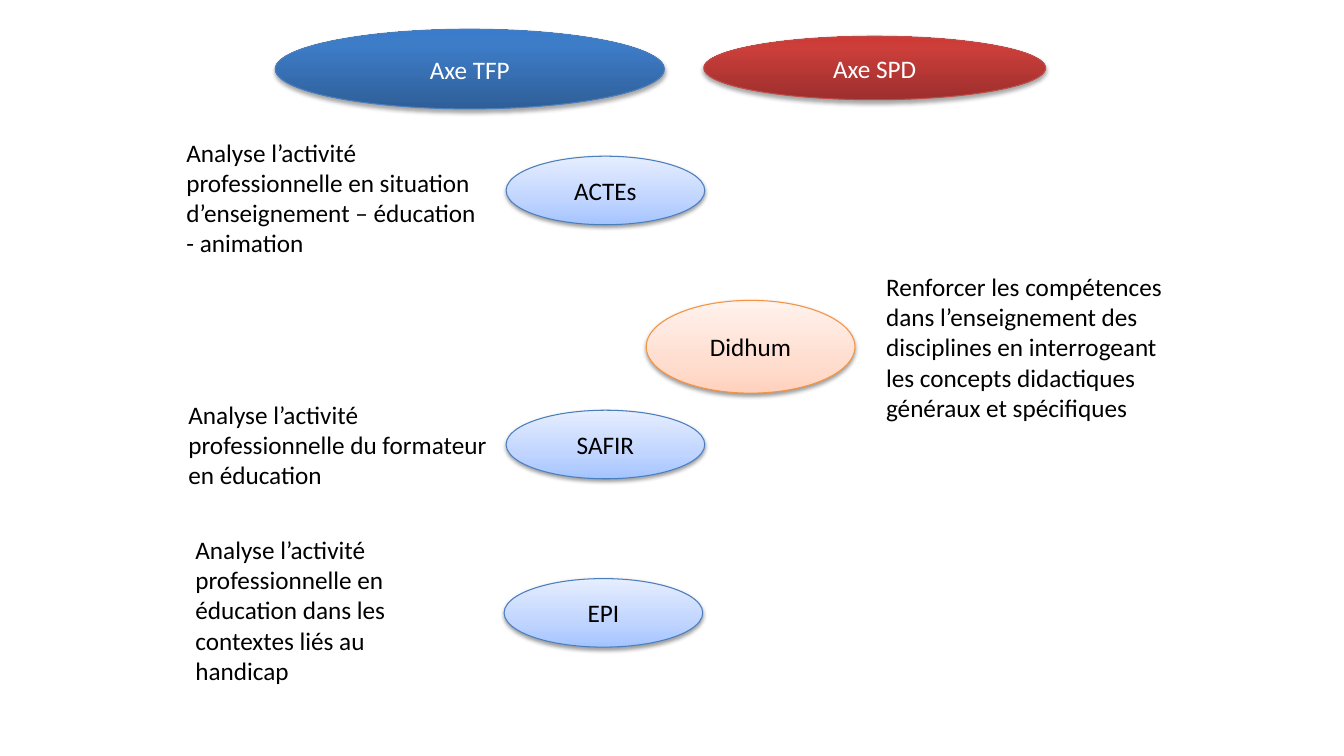
from copy import deepcopy

from lxml import etree
from pptx import Presentation
from pptx.dml.color import RGBColor
from pptx.enum.shapes import MSO_SHAPE
from pptx.enum.text import MSO_ANCHOR, MSO_AUTO_SIZE, PP_ALIGN
from pptx.oxml.ns import qn
from pptx.util import Inches, Pt

ELLIPSE = MSO_SHAPE.OVAL
MIDDLE = MSO_ANCHOR.MIDDLE
CENTER = PP_ALIGN.CENTER
GROW = MSO_AUTO_SIZE.SHAPE_TO_FIT_TEXT

# Gradient stops run from the bottom of the ellipse to the top
AXIS_STOPS, COURSE_STOPS = (0, 0.8, 1), (0, 0.35, 1)
AXIS_SHADOW = {"alpha": 35, "distance": 1.8}
COURSE_SHADOW = {"alpha": 38, "distance": 1.6}
STYLES = {
    "tfp axis": {"stops": AXIS_STOPS, "colors": ("2F5F99", "3D7CC7", "3A7CCB"),
                 "line": "4B7EBC", "text": "FFFFFF", "shadow": AXIS_SHADOW},
    "spd axis": {"stops": AXIS_STOPS, "colors": ("9C2F2D", "CB3E3A", "CE3B37"),
                 "line": "BF4C48", "text": "FFFFFF", "shadow": AXIS_SHADOW},
    "tfp course": {"stops": COURSE_STOPS, "colors": ("A4C4FF", "BFD4FF", "E6EEFF"),
                   "line": "4B7EBC", "text": "000000", "shadow": COURSE_SHADOW},
    "spd course": {"stops": COURSE_STOPS, "colors": ("FFD2BD", "FFDED0", "FFF2ED"),
                   "line": "F69240", "text": "000000", "shadow": COURSE_SHADOW},
}

ELLIPSES = [
    ("Axe SPD", "spd axis", (6.98, 0.36, 3.39, 0.63)),
    ("Axe TFP", "tfp axis", (2.73, 0.29, 3.86, 0.79)),
    ("ACTEs", "tfp course", (5.02, 1.55, 1.97, 0.68)),
    ("SAFIR", "tfp course", (5.02, 4.07, 1.97, 0.68)),
    ("EPI", "tfp course", (5, 5.74, 1.97, 0.68)),
    ("Didhum", "spd course", (6.41, 2.98, 2.07, 0.92)),
]

DESCRIPTIONS = [
    ("Analyse l’activité professionnelle en situation d’enseignement – éducation - animation",
     (1.75, 1.31, 3.19, 1.31)),
    ("Analyse l’activité professionnelle du formateur en éducation",
     (1.77, 3.91, 3.19, 1.01)),
    ("Analyse l’activité professionnelle en éducation dans les contextes liés au handicap",
     (1.84, 5.25, 2.83, 1.62)),
    ("Renforcer les compétences dans l’enseignement des disciplines en interrogeant "
     "les concepts didactiques généraux et spécifiques",
     (8.69, 2.64, 2.99, 1.62)),
]


def color(value):
    return RGBColor.from_string(value)


def write_text(frame, text, text_color):
    frame.word_wrap = True
    para = frame.paragraphs[0]
    span = para.add_run()
    span.text = text
    for name, value in {"name": "Calibri", "size": Pt(18)}.items():
        setattr(span.font, name, value)
    span.font.color.rgb = color(text_color)
    return para


def fill_gradient(shape, positions, colors):
    shape.fill.gradient()
    shape.fill.gradient_angle = 90
    # A new gradient has two stops; add the middle one
    stop_list = shape.fill._xPr.find(qn("a:gradFill")).find(qn("a:gsLst"))
    stop_list.insert(1, deepcopy(stop_list[0]))
    for stop, position, value in zip(shape.fill.gradient_stops, positions, colors):
        stop.position = position
        stop.color.rgb = color(value)


def add_shadow(shape, alpha, distance):
    shape.shadow.inherit = False
    effects = shape._element.spPr.find(qn("a:effectLst"))
    outer = etree.SubElement(effects, qn("a:outerShdw"), {
        "blurRad": str(Pt(3.1)), "dist": str(Pt(distance)),
        "dir": "5400000", "rotWithShape": "0"})
    tint = etree.SubElement(outer, qn("a:srgbClr"), val="000000")
    etree.SubElement(tint, qn("a:alpha"), val=str(alpha * 1000))


def add_ellipse(page, text, style, place):
    shape = page.shapes.add_shape(ELLIPSE, *map(Inches, place))
    fill_gradient(shape, style["stops"], style["colors"])
    shape.line.color.rgb = color(style["line"])
    shape.line.width = Pt(0.75)
    add_shadow(shape, **style["shadow"])
    shape.text_frame.vertical_anchor = MIDDLE
    write_text(shape.text_frame, text, style["text"]).alignment = CENTER


def add_description(page, text, place):
    box = page.shapes.add_textbox(*map(Inches, place))
    write_text(box.text_frame, text, "000000")
    box.text_frame.auto_size = GROW


def main():
    deck = Presentation()
    deck.slide_width, deck.slide_height = Inches(13.33), Inches(7.5)
    page = deck.slides.add_slide(deck.slide_layouts[6])

    # Axes and their courses
    for text, style_name, place in ELLIPSES:
        add_ellipse(page, text, STYLES[style_name], place)

    # Course descriptions
    for text, place in DESCRIPTIONS:
        add_description(page, text, place)

    deck.save("out.pptx")


if __name__ == "__main__":
    main()
